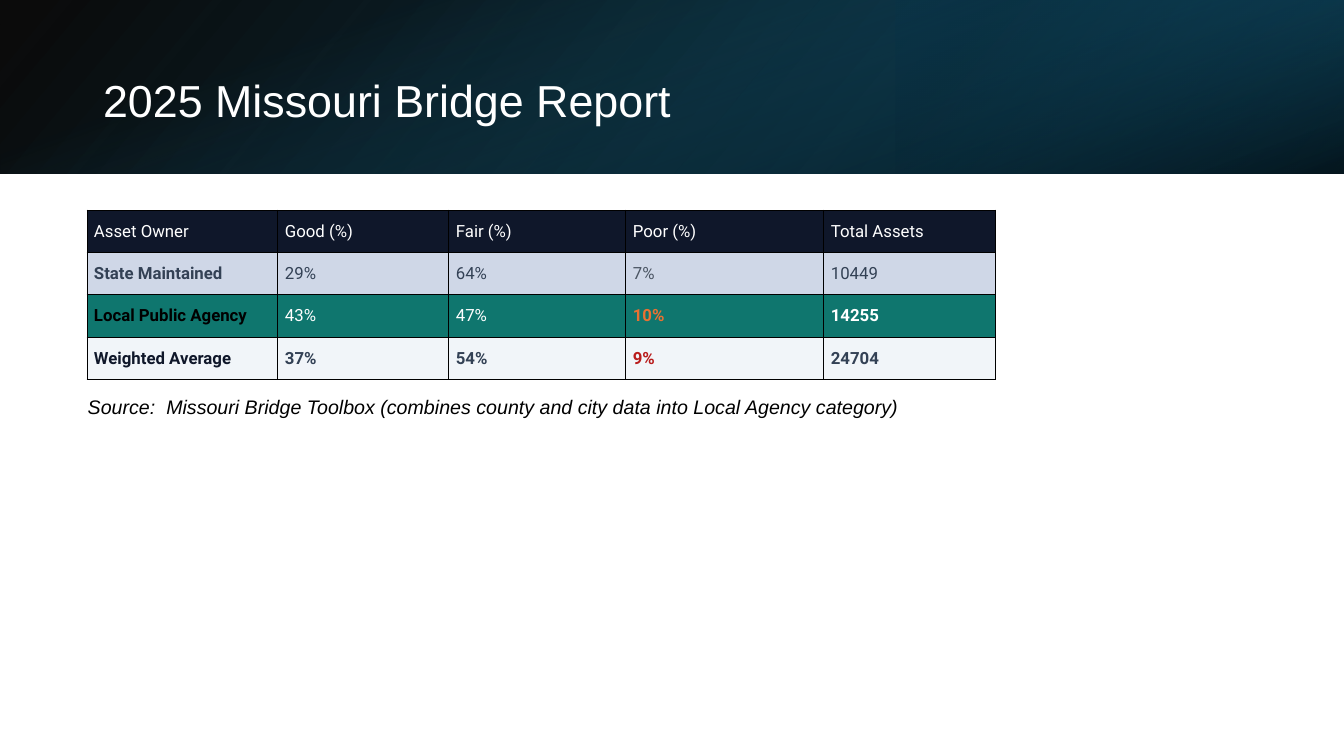
import pptx
import pptx.dml.color
import pptx.enum.shapes
import pptx.enum.text
import pptx.oxml
import pptx.oxml.ns
import pptx.util

RGBColor = pptx.dml.color.RGBColor
BLACK = RGBColor(0x00, 0x00, 0x00)
WHITE = RGBColor(0xFF, 0xFF, 0xFF)
NAVY = RGBColor(0x0F, 0x17, 0x2A)
SLATE = RGBColor(0x33, 0x41, 0x55)
GRAY = RGBColor(0x4B, 0x55, 0x63)
ORANGE = RGBColor(0xE9, 0x71, 0x32)
RED = RGBColor(0xB9, 0x1C, 0x1C)
GREEN = RGBColor(0x0F, 0x76, 0x6E)
PALE_BLUE = RGBColor(0xCF, 0xD7, 0xE7)
PALE_GRAY = RGBColor(0xF1, 0xF5, 0xF9)
OCEAN = RGBColor(0x0F, 0x48, 0x61)
DEEP_TEAL = RGBColor(0x0A, 0x30, 0x41)
TEAL = RGBColor(0x15, 0x60, 0x82)

SLIDE_WIDTH, SLIDE_HEIGHT, BANNER_HEIGHT = 1344, 756, 174
NAMESPACE = pptx.oxml.ns.nsdecls("a")


def px(length):
    return pptx.util.Emu(round(length * 914400 / 100.8))


def style_run(run, font_name, size, color, bold=False, italic=False):
    run.font.name = font_name
    run.font.size = pptx.util.Pt(size)
    run.font.color.rgb = color
    run.font.bold = bold
    run.font.italic = italic


presentation = pptx.Presentation()
presentation.slide_width = px(SLIDE_WIDTH)
presentation.slide_height = px(SLIDE_HEIGHT)
slide = presentation.slides.add_slide(presentation.slide_layouts[5])

turned_left = (SLIDE_WIDTH - BANNER_HEIGHT) // 2
banner_layers = [
    ((0, 0, SLIDE_WIDTH, BANNER_HEIGHT), 0, True, 140,
     [(0, BLACK, 96), (100, OCEAN, 100)]),
    ((896, 0, 448, BANNER_HEIGHT), 180, True, 320,
     [(0, DEEP_TEAL, 68), (19, DEEP_TEAL, 68), (100, TEAL, 79)]),
    ((turned_left, -turned_left, BANNER_HEIGHT, SLIDE_WIDTH), 90, False, 340,
     [(0, TEAL, 0), (23, TEAL, 0), (99, BLACK, 74), (100, BLACK, 74)]),
]
for box, rotation, flipped, angle, stops in banner_layers:
    shape = slide.shapes.add_shape(
        pptx.enum.shapes.MSO_SHAPE.RECTANGLE, *[px(length) for length in box])
    shape.shadow.inherit = False
    shape.line.fill.background()
    shape.rotation = rotation
    properties = shape.element.spPr
    if flipped:
        properties.find(pptx.oxml.ns.qn("a:xfrm")).set("flipH", "1")
    stop_xml = "".join(
        f'<a:gs pos="{position * 1000}"><a:srgbClr val="{color}">'
        f'<a:alpha val="{opacity * 1000}"/></a:srgbClr></a:gs>'
        for position, color, opacity in stops)
    gradient = pptx.oxml.parse_xml(
        f'<a:gradFill {NAMESPACE} rotWithShape="1"><a:gsLst>{stop_xml}</a:gsLst>'
        f'<a:lin ang="{angle * 60000}" scaled="0"/></a:gradFill>')
    properties.find(pptx.oxml.ns.qn("a:prstGeom")).addnext(gradient)

title = slide.shapes.title
title.element.getparent().append(title.element)
title.left, title.top, title.width, title.height = px(93), px(54), px(1107), px(97)
title.text_frame.text = "2025 Missouri Bridge Report"
title.text_frame.auto_size = pptx.enum.text.MSO_AUTO_SIZE.NONE
title.text_frame.vertical_anchor = pptx.enum.text.MSO_ANCHOR.MIDDLE
title_paragraph = title.text_frame.paragraphs[0]
title_paragraph.alignment = pptx.enum.text.PP_ALIGN.LEFT
title_paragraph.line_spacing = 0.9
style_run(title_paragraph.runs[0], "Arial", 32, WHITE)

source_box = slide.shapes.add_textbox(px(17), px(385), px(953), px(44))
source_frame = source_box.text_frame
source_frame.word_wrap = True
source_frame.margin_left = source_frame.margin_right = px(10)
source_frame.margin_top = source_frame.margin_bottom = px(10)
source_frame.text = ("Source:  Missouri Bridge Toolbox "
                     "(combines county and city data into Local Agency category)")
source_paragraph = source_frame.paragraphs[0]
source_paragraph.alignment = pptx.enum.text.PP_ALIGN.CENTER
style_run(source_paragraph.runs[0], "Arial", 14, BLACK, italic=True)

column_widths = [191, 171, 177, 198, 172]
bridge_rows = [
    (NAVY, ["Asset Owner", "Good (%)", "Fair (%)", "Poor (%)", "Total Assets"],
     [WHITE] * 5, [False] * 5),
    (PALE_BLUE, ["State Maintained", "29%", "64%", "7%", "10449"],
     [SLATE, SLATE, SLATE, GRAY, SLATE], [True, False, False, False, False]),
    (GREEN, ["Local Public Agency", "43%", "47%", "10%", "14255"],
     [BLACK, WHITE, WHITE, ORANGE, WHITE], [True, False, False, True, True]),
    (PALE_GRAY, ["Weighted Average", "37%", "54%", "9%", "24704"],
     [NAVY, SLATE, SLATE, RED, SLATE], [True] * 5),
]
table = slide.shapes.add_table(
    len(bridge_rows), len(column_widths),
    px(87), px(210), px(sum(column_widths)), px(170)).table
for column, width in zip(table.columns, column_widths):
    column.width = px(width)

for row, (fill_color, texts, colors, bolds) in zip(table.rows, bridge_rows):
    for cell, text, color, bold in zip(row.cells, texts, colors, bolds):
        cell.text_frame.text = text
        cell.vertical_anchor = pptx.enum.text.MSO_ANCHOR.MIDDLE
        cell.margin_left = cell.margin_right = px(7)
        cell.margin_top = cell.margin_bottom = px(3)
        style_run(cell.text_frame.paragraphs[0].runs[0], "Roboto", 12, color, bold)
        cell_properties = cell._tc.get_or_add_tcPr()
        for side in ("lnL", "lnR", "lnT", "lnB"):
            cell_properties.append(pptx.oxml.parse_xml(
                f'<a:{side} {NAMESPACE} w="9525"><a:solidFill>'
                f'<a:srgbClr val="{BLACK}"/></a:solidFill></a:{side}>'))
        cell.fill.solid()
        cell.fill.fore_color.rgb = fill_color

presentation.save("out.pptx")
